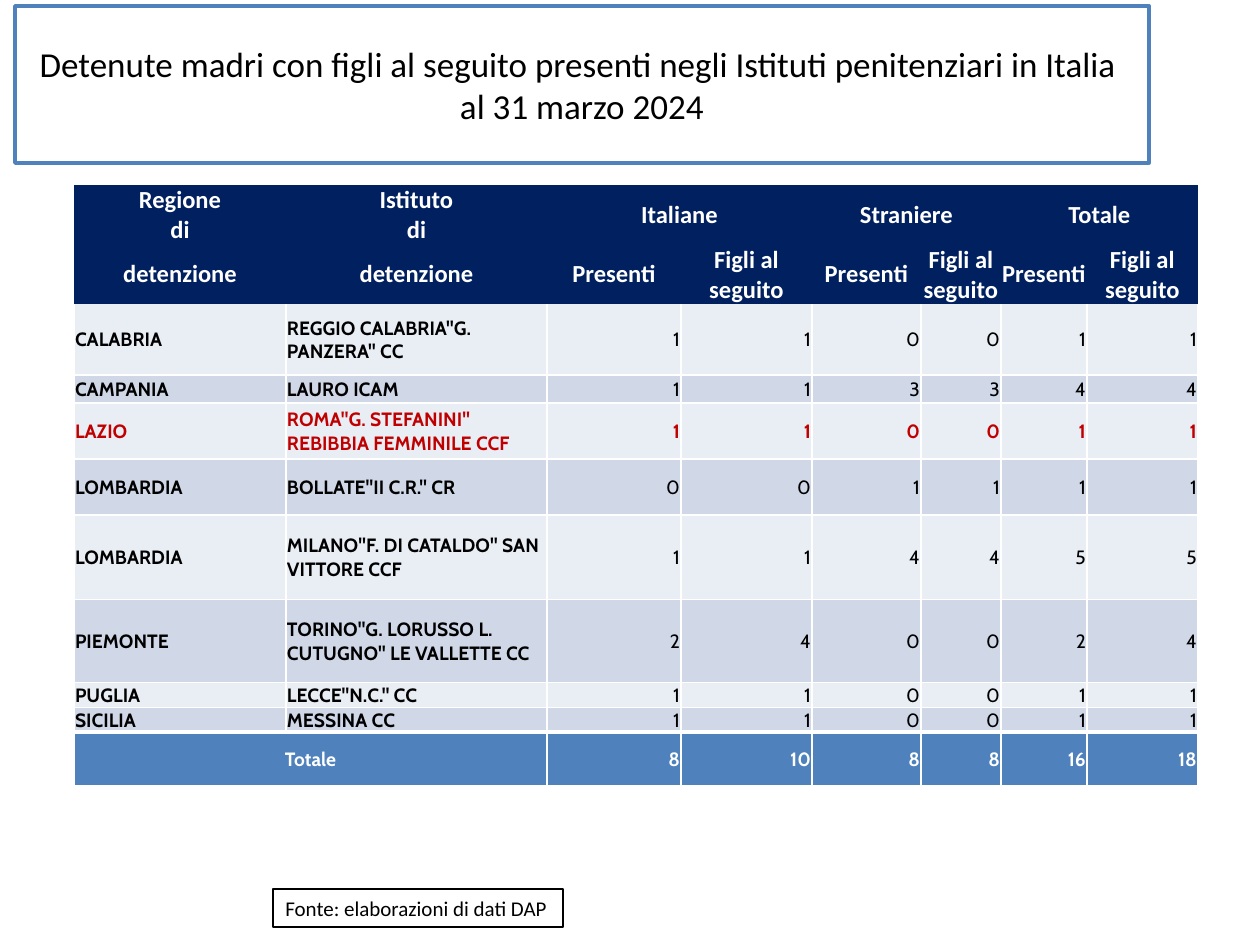
from dataclasses import dataclass
from lxml.etree import SubElement
from pptx import Presentation
from pptx.dml.color import RGBColor
from pptx.enum.shapes import MSO_SHAPE as Shape
from pptx.enum.text import MSO_ANCHOR as Anchor, MSO_AUTO_SIZE as AutoSize, PP_ALIGN as Align
from pptx.oxml.ns import qn
from pptx.util import Pt

SCALE = 914400 / 126
NO_GRID_STYLE = "{2D5ABB26-0587-4C30-8999-92F81FD0307C}"
WHITE, BLACK, NAVY, BLUE, RED = "FFFFFF", "000000", "002060", "4F81BD", "C00000"
BANDS = ("E9EDF4", "D0D8E8")

COLUMN_WIDTHS = [212, 261, 134, 131, 109, 80, 86, 111]
ROW_HEIGHTS = [30, 30, 59, 71, 28, 56, 56, 85, 83, 25, 23, 54]
HEADER = [
    ["Regione", "Istituto", "Italiane", "", "Straniere", "", "Totale", ""],
    ["di", "di", "", "", "", "", "", ""],
    ["detenzione"] * 2 + ["Presenti", "Figli al seguito"] * 3,
]
PRISONS = [
    ["CALABRIA", 'REGGIO CALABRIA"G. PANZERA" CC', 1, 1, 0, 0, 1, 1],
    ["CAMPANIA", "LAURO ICAM", 1, 1, 3, 3, 4, 4],
    ["LAZIO", 'ROMA"G. STEFANINI" REBIBBIA FEMMINILE CCF', 1, 1, 0, 0, 1, 1],
    ["LOMBARDIA", 'BOLLATE"II C.R." CR', 0, 0, 1, 1, 1, 1],
    ["LOMBARDIA", 'MILANO"F. DI CATALDO" SAN VITTORE CCF', 1, 1, 4, 4, 5, 5],
    ["PIEMONTE", 'TORINO"G. LORUSSO L. CUTUGNO" LE VALLETTE CC', 2, 4, 0, 0, 2, 4],
    ["PUGLIA", 'LECCE"N.C." CC', 1, 1, 0, 0, 1, 1],
    ["SICILIA", "MESSINA CC", 1, 1, 0, 0, 1, 1],
]
TOTALS = ["Totale", "", 8, 10, 8, 8, 16, 18]


def px(length):
    return round(length * SCALE)


def color(value):
    return RGBColor.from_string(value)


@dataclass
class Builder:
    page: object
    heading_font: str = "Calibri"
    body_font: str = "Cabin"

    def add_span(self, para, text, size, hue=BLACK, bold=False, font=None):
        span = para.add_run()
        span.text = text
        span.font.name = font or self.heading_font
        span.font.size = Pt(size)
        span.font.bold = bold
        span.font.color.rgb = color(hue)

    def frame(self, box, line, width):
        box.fill.solid()
        box.fill.fore_color.rgb = color(WHITE)
        box.line.color.rgb = color(line)
        box.line.width = Pt(width)

    def title(self, lines, left, top, width, height):
        box = self.page.shapes.title
        box.left, box.top, box.width, box.height = map(px, (left, top, width, height))
        self.frame(box, BLUE, 2)
        box.text_frame.auto_size = AutoSize.NONE
        box.text_frame.vertical_anchor = Anchor.MIDDLE
        para = box.text_frame.paragraphs[0]
        para.alignment = Align.CENTER
        for index, line in enumerate(lines):
            if index:
                para.add_line_break()
            self.add_span(para, line, 20)

    def note(self, text, left, top, width, height):
        box = self.page.shapes.add_shape(Shape.RECTANGLE, *map(px, (left, top, width, height)))
        box.shadow.inherit = False
        self.frame(box, BLACK, 0.75)
        box.text_frame.word_wrap = False
        box.text_frame.auto_size = AutoSize.SHAPE_TO_FIT_TEXT
        box.text_frame.vertical_anchor = Anchor.TOP
        para = box.text_frame.paragraphs[0]
        para.alignment = Align.LEFT
        self.add_span(para, text, 12)

    def table(self, left, top, widths, heights):
        grid = self.page.shapes.add_table(
            len(heights), len(widths), px(left), px(top), px(sum(widths)), px(sum(heights))
        ).table
        grid.first_row = grid.horz_banding = False
        grid._tbl.tblPr.find(qn("a:tableStyleId")).text = NO_GRID_STYLE
        for column, width in zip(grid.columns, widths):
            column.width = px(width)
        for row, height in zip(grid.rows, heights):
            row.height = px(height)
        return grid

    def cell(self, cell, text, fill, inset, align, size, hue, bold, font):
        cell.margin_left = cell.margin_top = cell.margin_right = px(inset)
        cell.margin_bottom = 0
        cell.vertical_anchor = Anchor.MIDDLE
        cell.fill.solid()
        cell.fill.fore_color.rgb = color(fill)
        para = cell.text_frame.paragraphs[0]
        para.alignment = align
        if text:
            self.add_span(para, text, size, hue, bold, font)

    def borders(self, cell, **widths):
        properties = cell._tc.get_or_add_tcPr()
        for index, (side, width) in enumerate(widths.items()):
            line = SubElement(properties, qn(f"a:ln{side}"), w=str(Pt(width)))
            fill = SubElement(line, qn("a:solidFill"))
            SubElement(fill, qn("a:srgbClr"), val=WHITE)
            properties.insert(index, line)

    def header_row(self, cells, texts):
        for cell, text in zip(cells, texts):
            self.cell(cell, text, NAVY, 0, Align.CENTER, 14, WHITE, True, self.heading_font)

    def data_row(self, cells, values, fill, hue, label_align, bold_numbers, top, bottom):
        for index, (cell, value) in enumerate(zip(cells, values)):
            label = index < 2
            align = label_align if label else Align.RIGHT
            self.cell(cell, str(value), fill, 1, align, 11, hue, label or bold_numbers, self.body_font)
            edges = {"L": 1, "R": 1, "T": top, "B": bottom}
            self.borders(cell, **{side: width for side, width in edges.items() if width})


def main():
    deck = Presentation()
    deck.slide_width, deck.slide_height = px(1260), px(945)
    builder = Builder(deck.slides.add_slide(deck.slide_layouts[5]))
    builder.title(
        ["Detenute madri con figli al seguito presenti negli Istituti penitenziari in Italia ", "al 31 marzo 2024"],
        15, 6, 1134, 157,
    )
    builder.note("Fonte: elaborazioni di dati DAP", 273, 889, 290, 38)

    grid = builder.table(74, 185, COLUMN_WIDTHS, ROW_HEIGHTS)
    rows = [list(row.cells) for row in grid.rows]
    for cells, texts in zip(rows, HEADER):
        builder.header_row(cells, texts)
    last = len(PRISONS) - 1
    for index, (cells, prison) in enumerate(zip(rows[len(HEADER):], PRISONS)):
        highlighted = prison[0] == "LAZIO"
        builder.data_row(
            cells, prison, BANDS[index % 2], RED if highlighted else BLACK, Align.LEFT, highlighted,
            1 if index else 0, 3 if index == last else 1,
        )
    builder.data_row(rows[-1], TOTALS, BLUE, WHITE, Align.CENTER, True, 3, 1)

    for column in (2, 4, 6):
        grid.cell(0, column).merge(grid.cell(1, column + 1))
    rows[-1][0].merge(rows[-1][1])
    deck.save("out.pptx")


if __name__ == "__main__":
    main()
